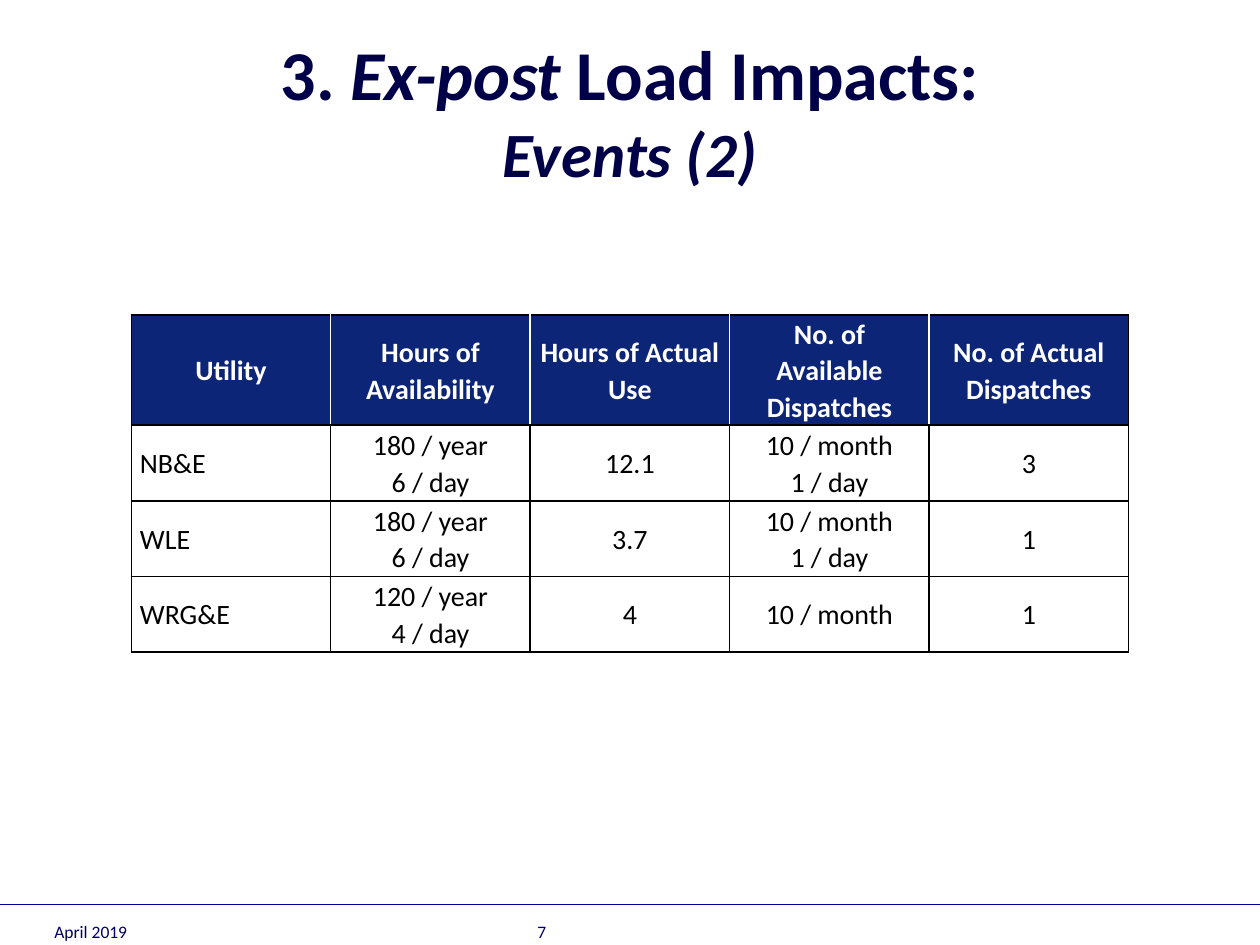
from collections import namedtuple
from dataclasses import dataclass

from lxml.etree import SubElement
from pptx import Presentation
from pptx.dml.color import RGBColor
from pptx.enum.shapes import MSO_CONNECTOR as Connector
from pptx.enum.text import MSO_ANCHOR as Anchor, MSO_AUTO_SIZE as AutoSize, PP_ALIGN as Align
from pptx.oxml import parse_xml
from pptx.oxml.ns import nsdecls, qn
from pptx.util import Pt

Box = namedtuple("Box", "left top width height")


@dataclass(frozen=True)
class Theme:
    font: str = "Calibri"
    title: str = "000048"
    footer: str = "000066"
    rule: str = "000099"
    header: str = "0C2577"
    light: str = "FFFFFF"
    dark: str = "000000"
    title_size: int = 40
    subtitle_size: int = 36
    table_size: int = 16
    footer_size: int = 10


THEME = Theme()
HEADINGS = ["Utility", "Hours of Availability", "Hours of Actual Use",
            "No. of Available Dispatches", "No. of Actual Dispatches"]
EVENTS = [
    ["NB&E", "180 / year\n6 / day", "12.1", "10 / month\n1 / day", "3"],
    ["WLE", "180 / year\n6 / day", "3.7", "10 / month\n1 / day", "1"],
    ["WRG&E", "120 / year\n4 / day", "4", "10 / month", "1"],
]


def style(font, size, color, bold=False, italic=False):
    font.name = THEME.font
    font.size = Pt(size)
    font.color.rgb = RGBColor.from_string(color)
    font.bold = bold
    font.italic = italic


def place(shape, box):
    shape.left, shape.top, shape.width, shape.height = map(Pt, box)


def add_title(page, box):
    title = page.shapes.title
    place(title, box)
    frame = title.text_frame
    frame.auto_size = AutoSize.NONE
    frame.vertical_anchor = Anchor.MIDDLE
    para = frame.paragraphs[0]
    para.alignment = Align.CENTER
    for text, italic in (("3. ", False), ("Ex-post", True), (" Load Impacts:", False)):
        span = para.add_run()
        span.text = text
        style(span.font, THEME.title_size, THEME.title, True, italic)
    para.add_line_break()
    span = para.add_run()
    span.text = "Events (2)"
    style(span.font, THEME.subtitle_size, THEME.title, True, True)


def set_borders(cell, colors):
    properties = cell._tc.get_or_add_tcPr()
    for index, (side, color) in enumerate(zip("LRTB", colors)):
        properties.insert(index, parse_xml(
            f'<a:ln{side} {nsdecls("a")} w="{Pt(1)}"><a:solidFill>'
            f'<a:srgbClr val="{color}"/></a:solidFill></a:ln{side}>'))


def fill_cell(cell, text, is_header, column):
    cell.text = text
    cell.vertical_anchor = Anchor.MIDDLE
    cell.margin_left = cell.margin_right = Pt(5)
    cell.margin_top = cell.margin_bottom = 0
    left = right = THEME.dark
    if is_header:
        cell.fill.solid()
        cell.fill.fore_color.rgb = RGBColor.from_string(THEME.header)
        left = THEME.light if column > 0 else THEME.dark
        right = THEME.light if column < len(HEADINGS) - 1 else THEME.dark
    else:
        cell.fill.background()
    set_borders(cell, (left, right, THEME.dark, THEME.dark))
    for para in cell.text_frame.paragraphs:
        para.alignment = Align.CENTER if is_header or column else Align.LEFT
        para.line_spacing = 1.07
        for span in para.runs:
            style(span.font, THEME.table_size, THEME.light if is_header else THEME.dark, is_header)


def add_events_table(page, box, header_height):
    rows = [HEADINGS, *EVENTS]
    table = page.shapes.add_table(len(rows), len(HEADINGS), *map(Pt, box)).table
    table.horz_banding = False
    for column in table.columns:
        column.width = Pt(box.width / len(HEADINGS))
    body_height = (box.height - header_height) / len(EVENTS)
    for index, row in enumerate(rows):
        table.rows[index].height = Pt(body_height if index else header_height)
        for column, text in enumerate(row):
            fill_cell(table.cell(index, column), text, index == 0, column)


def add_footer(page, box):
    rule = page.shapes.add_connector(
        Connector.STRAIGHT, Pt(box.left), Pt(box.top), Pt(box.left + box.width), Pt(box.top))
    rule.line.color.rgb = RGBColor.from_string(THEME.rule)
    rule.line.width = Pt(0.75)
    SubElement(rule._element.spPr, qn("a:effectLst"))
    for text, offset in (("April 2019", 24), ("7", 300)):
        label = page.shapes.add_textbox(
            Pt(box.left + offset), Pt(box.top - 12), Pt(168), Pt(box.height + 14))
        frame = label.text_frame
        frame.word_wrap = True
        frame.vertical_anchor = Anchor.BOTTOM
        frame.text = text
        style(frame.paragraphs[0].runs[0].font, THEME.footer_size, THEME.footer)


def main():
    deck = Presentation()
    deck.slide_width, deck.slide_height = Pt(720), Pt(540)
    page = deck.slides.add_slide(deck.slide_layouts[5])
    add_footer(page, Box(0, 517, 720, 23))
    add_title(page, Box(36, 18, 648, 90))
    add_events_table(page, Box(75, 180, 570, 192.6), header_height=63)
    deck.save("out.pptx")


if __name__ == "__main__":
    main()
